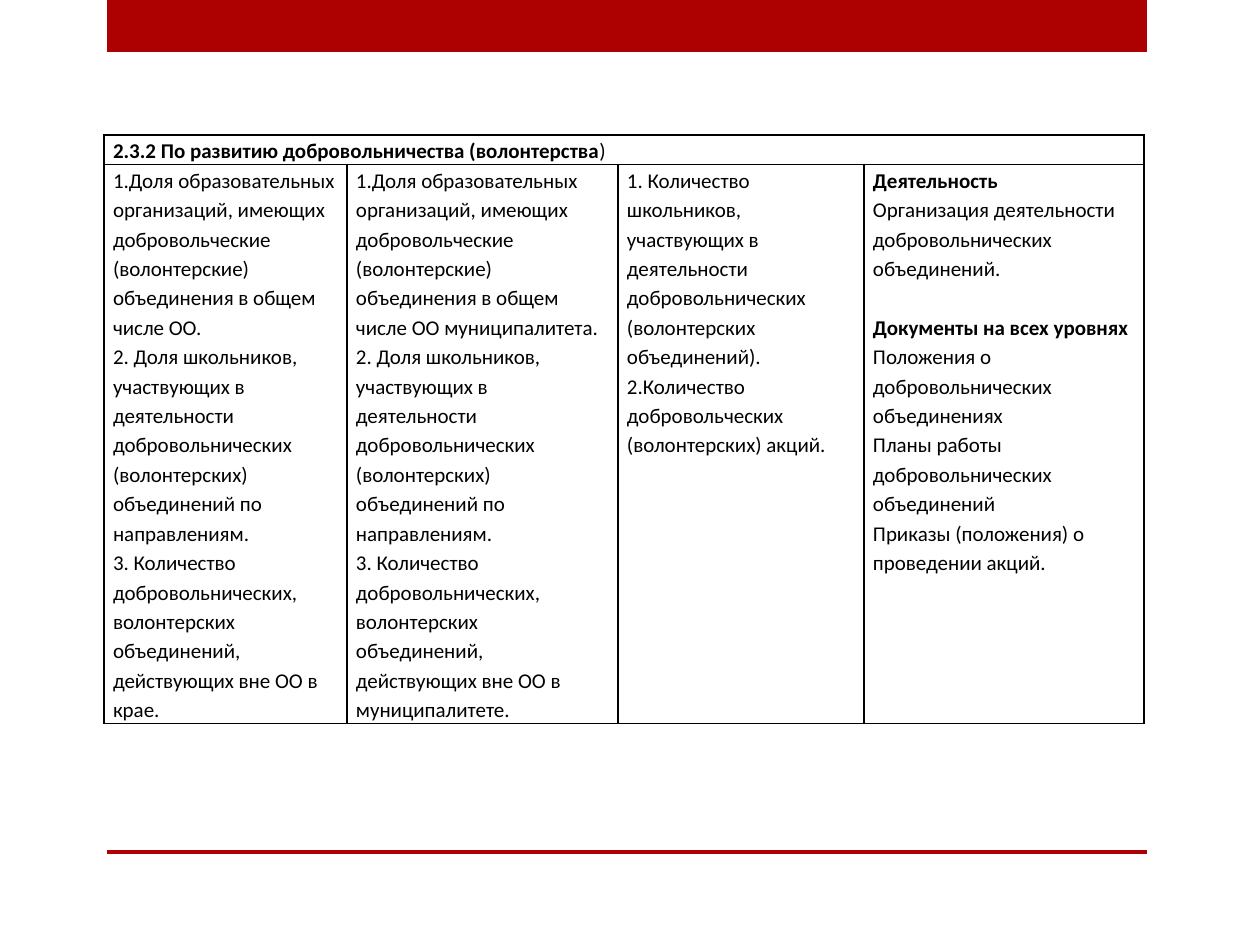
"""Builds a slide with a table of indicators for the development of volunteering."""
from dataclasses import dataclass

from lxml.etree import SubElement
from pptx import Presentation
from pptx.dml.color import RGBColor
from pptx.enum.shapes import MSO_SHAPE as Shape
from pptx.oxml.ns import qn
from pptx.util import Emu, Pt

HEADING = [("2.3.2 По развитию добровольничества (волонтерства", True), (")", False)]
STUDENTS = (
    "2. Доля школьников, участвующих в деятельности добровольнических "
    "(волонтерских) объединений по направлениям."
)
SHARE = (
    "1.Доля образовательных организаций, имеющих добровольческие "
    "(волонтерские) объединения в общем числе ОО{}."
)
OUTSIDE = (
    "3. Количество добровольнических, волонтерских объединений, "
    "действующих вне ОО в {}."
)
COLUMNS = [
    (243, [SHARE.format(""), STUDENTS, OUTSIDE.format("крае")]),
    (271, [SHARE.format(" муниципалитета"), STUDENTS, OUTSIDE.format("муниципалитете")]),
    (246, [
        "1. Количество школьников, участвующих в деятельности "
        "добровольнических (волонтерских объединений).",
        "2.Количество добровольческих (волонтерских) акций.",
    ]),
    (280, [
        "Деятельность",
        "Организация деятельности добровольнических объединений.",
        "Документы на всех уровнях",
        "Положения о добровольнических объединениях",
        "Планы работы добровольнических объединений",
        "Приказы (положения) о проведении акций.",
    ]),
]
SUBHEADS = {"Деятельность": 0, "Документы на всех уровнях": 16.8}
BARS = [(107, 0, 1040, 52), (107, 850, 1040, 4)]
TABLE_LEFT, TABLE_TOP = 104, 135
ROW_HEIGHTS = [29, 559]
CELL_INSET = 9


@dataclass(frozen=True)
class Theme:
    accent: str = "AD0101"
    ink: str = "000000"
    font: str = "Calibri"
    size: float = 12
    leading: float = 1.15
    border: float = 1


THEME = Theme()


def px(length):
    return Emu(round(length * 914400 / 126))


def add_bar(page, place):
    bar = page.shapes.add_shape(Shape.RECTANGLE, *map(px, place))
    bar.shadow.inherit = False
    bar.fill.solid()
    bar.fill.fore_color.rgb = RGBColor.from_string(THEME.accent)
    bar.line.fill.background()


def style_cell(cell):
    cell.margin_left = cell.margin_right = px(CELL_INSET)
    cell.margin_top = cell.margin_bottom = 0
    properties = cell._tc.get_or_add_tcPr()
    for side in "LRTB":
        border = SubElement(properties, qn(f"a:ln{side}"), w=str(Pt(THEME.border)))
        fill = SubElement(border, qn("a:solidFill"))
        SubElement(fill, qn("a:srgbClr"), val=THEME.ink)
    cell.fill.background()


def write_cell(cell, paragraphs):
    frame = cell.text_frame
    for index, (spans, gap) in enumerate(paragraphs):
        para = frame.add_paragraph() if index else frame.paragraphs[0]
        para.line_spacing = THEME.leading
        para.space_before = Pt(gap)
        para.font.name = THEME.font
        para.font.size = Pt(THEME.size)
        para.font.color.rgb = RGBColor.from_string(THEME.ink)
        for text, bold in spans:
            span = para.add_run()
            span.text = text
            span.font.bold = bold


def add_indicators(page):
    widths = [width for width, _ in COLUMNS]
    table = page.shapes.add_table(
        len(ROW_HEIGHTS), len(COLUMNS),
        *map(px, (TABLE_LEFT, TABLE_TOP, sum(widths), sum(ROW_HEIGHTS))),
    ).table
    table.first_row = table.horz_banding = False
    for row, height in zip(table.rows, ROW_HEIGHTS):
        row.height = px(height)
    for column, width in zip(table.columns, widths):
        column.width = px(width)
    for cell in table.iter_cells():
        style_cell(cell)
    table.cell(0, 0).merge(table.cell(0, len(COLUMNS) - 1))
    write_cell(table.cell(0, 0), [(HEADING, 0)])
    for index, (_, lines) in enumerate(COLUMNS):
        paragraphs = [([(line, line in SUBHEADS)], SUBHEADS.get(line, 0)) for line in lines]
        write_cell(table.cell(1, index), paragraphs)


def main():
    deck = Presentation()
    deck.slide_width, deck.slide_height = px(1260), px(945)
    page = deck.slides.add_slide(deck.slide_layouts[6])
    for place in BARS:
        add_bar(page, place)
    add_indicators(page)
    deck.save("out.pptx")


if __name__ == "__main__":
    main()
